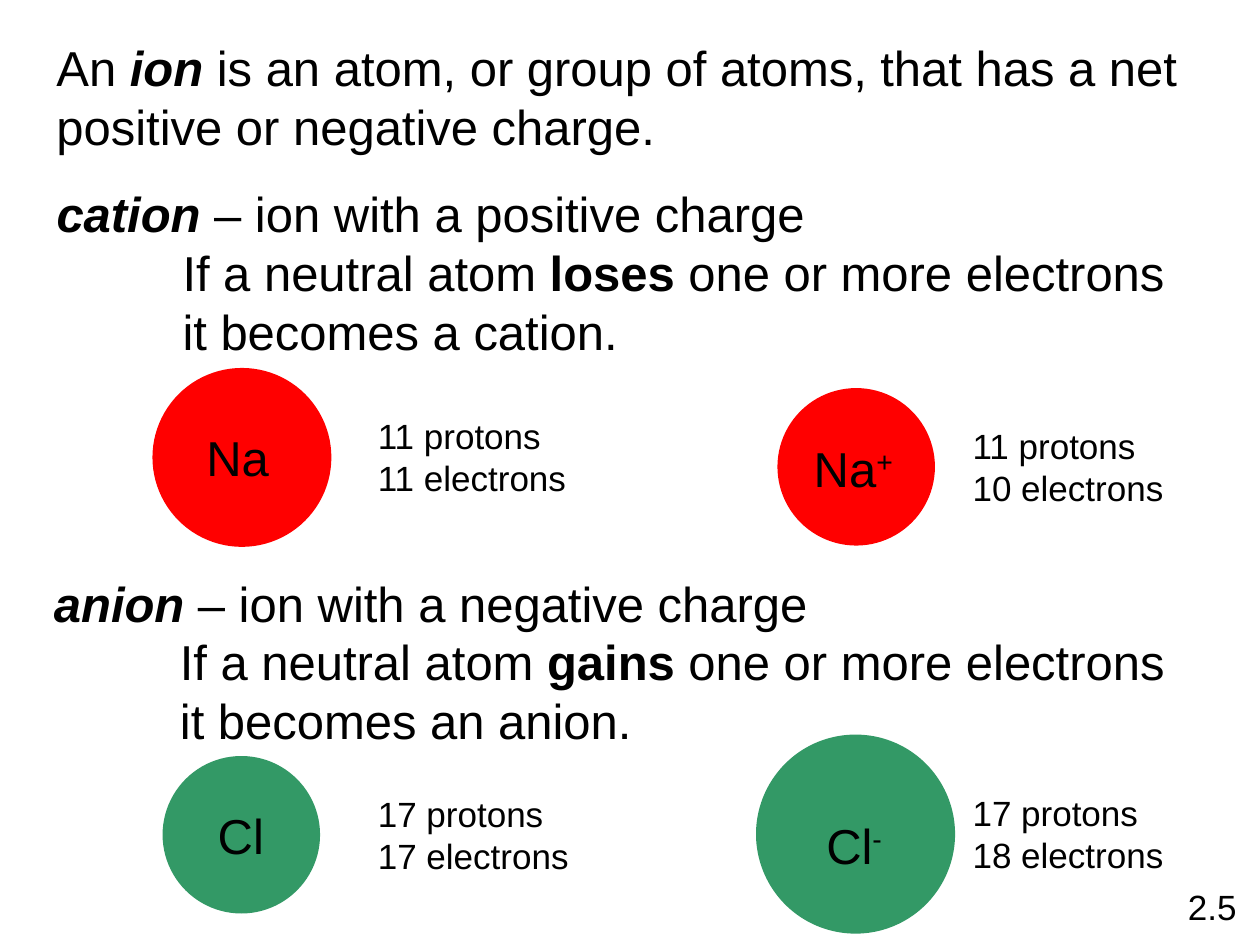
import lxml.etree
import pptx
import pptx.util
import pptx.dml.color
import pptx.enum.shapes
import pptx.enum.text
import pptx.oxml.ns

Inches = pptx.util.Inches
qn = pptx.oxml.ns.qn
COLORS = {"background": "FFFFFF", "text": "000000", "sodium": "FF0000", "chlorine": "339966"}
BOLD = {"bold": True}
TERM = {"bold": True, "italic": True}


def rgb(name):
    return pptx.dml.color.RGBColor.from_string(COLORS[name])


def add_tab_stop(p, position):
    tabs = lxml.etree.SubElement(p._p.get_or_add_pPr(), qn("a:tabLst"))
    lxml.etree.SubElement(tabs, qn("a:tab"), pos=str(position), algn="l")


def add_text(shapes, box, paragraphs, size, wrap=False):
    sp = shapes.add_textbox(*map(Inches, box))
    tf = sp.text_frame
    tf.word_wrap = wrap
    tf.auto_size = pptx.enum.text.MSO_AUTO_SIZE.SHAPE_TO_FIT_TEXT
    for i, runs in enumerate(paragraphs):
        p = tf.add_paragraph() if i else tf.paragraphs[0]
        if runs[0][0].startswith("\t"):
            add_tab_stop(p, Inches(1))
        for text, style in runs:
            r = p.add_run()
            r.text = text
            font = {"name": "Arial", "size": pptx.util.Pt(size), **style}
            superscript = font.pop("superscript", False)
            for key, value in font.items():
                setattr(r.font, key, value)
            r.font.color.rgb = rgb("text")
            if superscript:
                r.font._element.set("baseline", "30000")


def add_definition(shapes, box, term, charge, change, result):
    add_text(shapes, box, [
        [(term, TERM), (f" – ion with a {charge} charge", {})],
        [("\tIf a neutral atom ", {}), (change, BOLD), (" one or more electrons", {})],
        [(f"\tit becomes {result}.", {})],
    ], 28)


def add_particle(shapes, circle, label, counts, element, symbol, charge, protons, electrons):
    group = shapes.add_group_shape().shapes
    sp = group.add_shape(pptx.enum.shapes.MSO_SHAPE.OVAL, *map(Inches, circle))
    sp.shadow.inherit = False
    sp.fill.solid()
    sp.fill.fore_color.rgb = rgb(element)
    sp.line.fill.background()
    runs = [(symbol, {})]
    if charge:
        runs.append((charge, {"superscript": True}))
    add_text(group, label, [runs], 28)
    add_text(group, counts, [[(f"{protons} protons", {})], [(f"{electrons} electrons", {})]], 20)


def main():
    prs = pptx.Presentation()
    prs.slide_width, prs.slide_height = Inches(10), Inches(7.5)
    s = prs.slides.add_slide(prs.slide_layouts[6])
    s.background.fill.solid()
    s.background.fill.fore_color.rgb = rgb("background")

    add_text(s.shapes, (0.35, 0.25, 9.3, 1.03), [[
        ("An ", {}), ("ion", TERM),
        (" is an atom, or group of atoms, that has a net positive or negative charge.", {}),
    ]], 28, wrap=True)
    add_definition(s.shapes, (0.35, 1.41, 9.02, 1.5), "cation", "positive", "loses", "a cation")
    add_definition(s.shapes, (0.33, 4.5, 9.04, 1.5), "anion", "negative", "gains", "an anion")

    particles = [
        ((1.21, 2.92, 1.42, 1.42), (1.54, 3.34, 0.7, 0.57), (2.9, 3.24, 1.75, 0.77),
         "sodium", "Na", "", 11, 11),
        ((6.17, 3.08, 1.25, 1.25), (6.36, 3.43, 0.85, 0.57), (7.62, 3.32, 1.75, 0.77),
         "sodium", "Na", "+", 11, 10),
        ((1.29, 6, 1.25, 1.25), (1.63, 6.34, 0.57, 0.57), (2.9, 6.24, 1.75, 0.77),
         "chlorine", "Cl", "", 17, 17),
        ((6, 5.83, 1.58, 1.58), (6.46, 6.42, 0.66, 0.57), (7.62, 6.23, 1.75, 0.77),
         "chlorine", "Cl", "-", 17, 18),
    ]
    for particle in particles:
        add_particle(s.shapes, *particle)

    add_text(s.shapes, (9.33, 6.98, 0.59, 0.43), [[("2.5", {})]], 20)
    prs.save("out.pptx")


if __name__ == "__main__":
    main()
